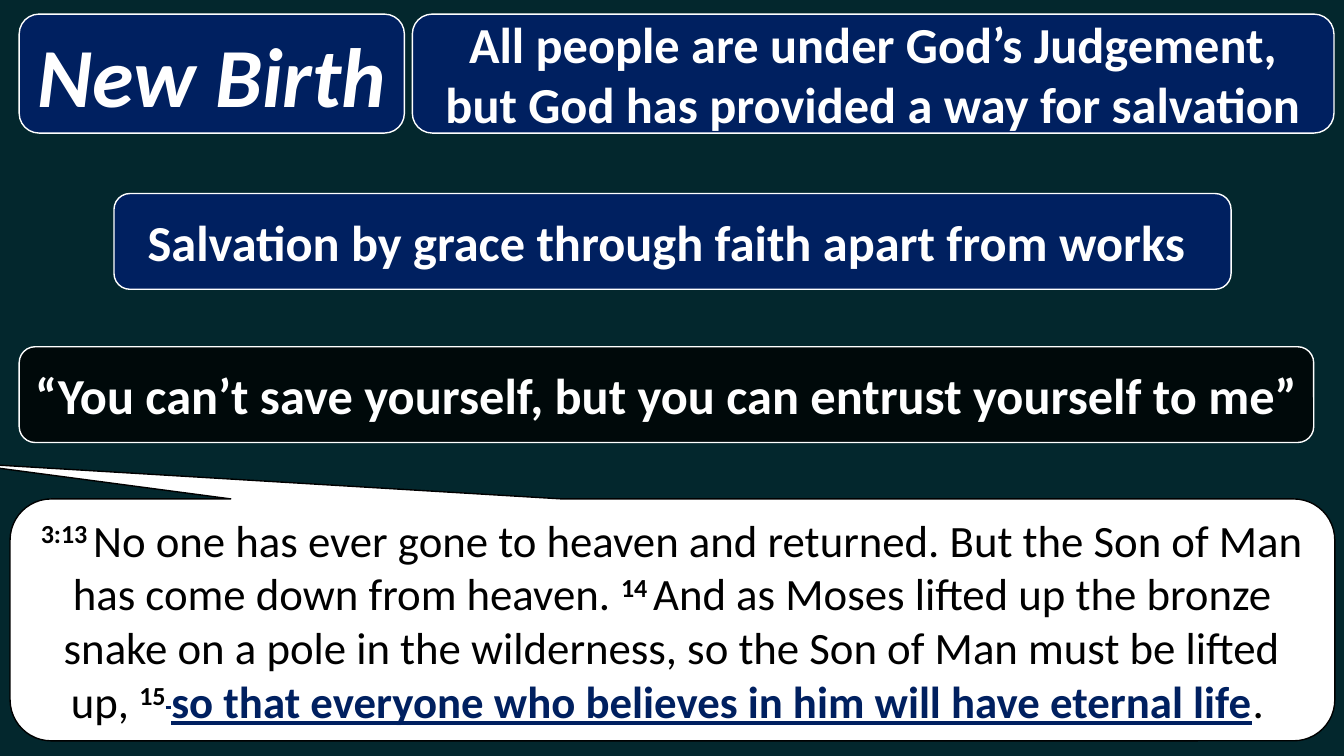
from dataclasses import dataclass

from lxml import etree
from pptx import Presentation
from pptx.dml.color import RGBColor
from pptx.enum.shapes import MSO_SHAPE
from pptx.enum.text import MSO_ANCHOR, PP_ALIGN
from pptx.oxml.ns import qn
from pptx.util import Inches, Pt

ROUNDED = MSO_SHAPE.ROUNDED_RECTANGLE
CALLOUT = MSO_SHAPE.ROUNDED_RECTANGULAR_CALLOUT
MIDDLE = MSO_ANCHOR.MIDDLE
CENTER = PP_ALIGN.CENTER

FONT = "Calibri"
COLORS = {
    "background": "03272D",
    "navy": "002060",
    "white": "FFFFFF",
    "black": "000000",
}

# Grid: 100 columns by 100 rows
SLIDE_WIDTH, SLIDE_HEIGHT = Inches(13.33), Inches(7.5)
COLUMN, ROW = SLIDE_WIDTH / 100, SLIDE_HEIGHT / 100
LEFT_EDGE, TOP_EDGE = 1.43, 1.87
HEADER_ROWS, BAND_ROWS = 15.73, 12.67


@dataclass
class Span:
    text: str
    size: int = 36
    color: str = "white"
    bold: bool = True
    italic: bool = False
    underline: bool = False
    superscript: bool = False


@dataclass
class Panel:
    left: float
    top: float
    columns: float
    rows: float
    spans: list[Span]
    fill: str = "navy"
    line: str = "white"
    opacity: int = 100
    kind: MSO_SHAPE = ROUNDED
    adjustments: tuple[float, ...] = ()


def verse_number(text: str) -> Span:
    return Span(text, 32, "black", superscript=True)


def verse(text: str) -> Span:
    return Span(text, 32, "black", bold=False)


PASSAGE = [
    verse_number("3:13 "),
    verse("No one has ever gone to heaven and returned. "
          "But the Son of Man has come down from heaven. "),
    verse_number("14 "),
    verse("And as Moses lifted up the bronze snake on a pole in the wilderness, "
          "so the Son of Man must be lifted up, "),
    verse_number("15"),
    Span(" ", 32, "navy", underline=True, superscript=True),
    Span("so that everyone who believes in him will have eternal life",
         32, "navy", underline=True),
    verse(". "),
]

PANELS = [
    # Topic
    Panel(LEFT_EDGE, TOP_EDGE, 28.66, HEADER_ROWS,
          [Span("New Birth", 60, italic=True)]),
    # Bible passage
    Panel(0.75, 66, 98.57, 32, PASSAGE, fill="white", line="black",
          kind=CALLOUT, adjustments=(-0.54, -0.65, 0.17)),
    # Headline
    Panel(30.68, TOP_EDGE, 68.57, HEADER_ROWS,
          [Span("All people are under God’s Judgement, "
                "but God has provided a way for salvation")]),
    # Key statements
    Panel(8.48, 25.6, 83.12, BAND_ROWS,
          [Span("Salvation by grace through faith apart from works ")]),
    Panel(LEFT_EDGE, 45.87, 96.32, BAND_ROWS,
          [Span("“You can’t save yourself, but you can entrust yourself to me”")],
          fill="black", opacity=76),
]


def color(name: str) -> RGBColor:
    return RGBColor.from_string(COLORS[name])


def add_span(paragraph, span: Span) -> None:
    run = paragraph.add_run()
    run.text = span.text
    font = run.font
    font.name = FONT
    font.size = Pt(span.size)
    font.bold = span.bold
    font.italic = span.italic
    font.underline = span.underline
    font.color.rgb = color(span.color)
    if span.superscript:
        run._r.get_or_add_rPr().set("baseline", "30000")


def add_panel(slide, panel: Panel) -> None:
    shape = slide.shapes.add_shape(
        panel.kind, round(panel.left * COLUMN), round(panel.top * ROW),
        round(panel.columns * COLUMN), round(panel.rows * ROW))
    for index, value in enumerate(panel.adjustments):
        shape.adjustments[index] = value
    shape.shadow.inherit = False
    shape.fill.solid()
    shape.fill.fore_color.rgb = color(panel.fill)
    if panel.opacity < 100:
        fill_color = shape._element.spPr.find(qn("a:solidFill"))[0]
        alpha = etree.SubElement(fill_color, qn("a:alpha"))
        alpha.set("val", str(panel.opacity * 1000))
    shape.line.color.rgb = color(panel.line)
    shape.line.width = Pt(1)

    text_frame = shape.text_frame
    text_frame.word_wrap = True
    text_frame.vertical_anchor = MIDDLE
    paragraph = text_frame.paragraphs[0]
    paragraph.alignment = CENTER
    for span in panel.spans:
        add_span(paragraph, span)


def main() -> None:
    presentation = Presentation()
    presentation.slide_width = SLIDE_WIDTH
    presentation.slide_height = SLIDE_HEIGHT
    slide = presentation.slides.add_slide(presentation.slide_layouts[6])
    background = slide.background.fill
    background.solid()
    background.fore_color.rgb = color("background")
    for panel in PANELS:
        add_panel(slide, panel)
    presentation.save("out.pptx")


if __name__ == "__main__":
    main()
